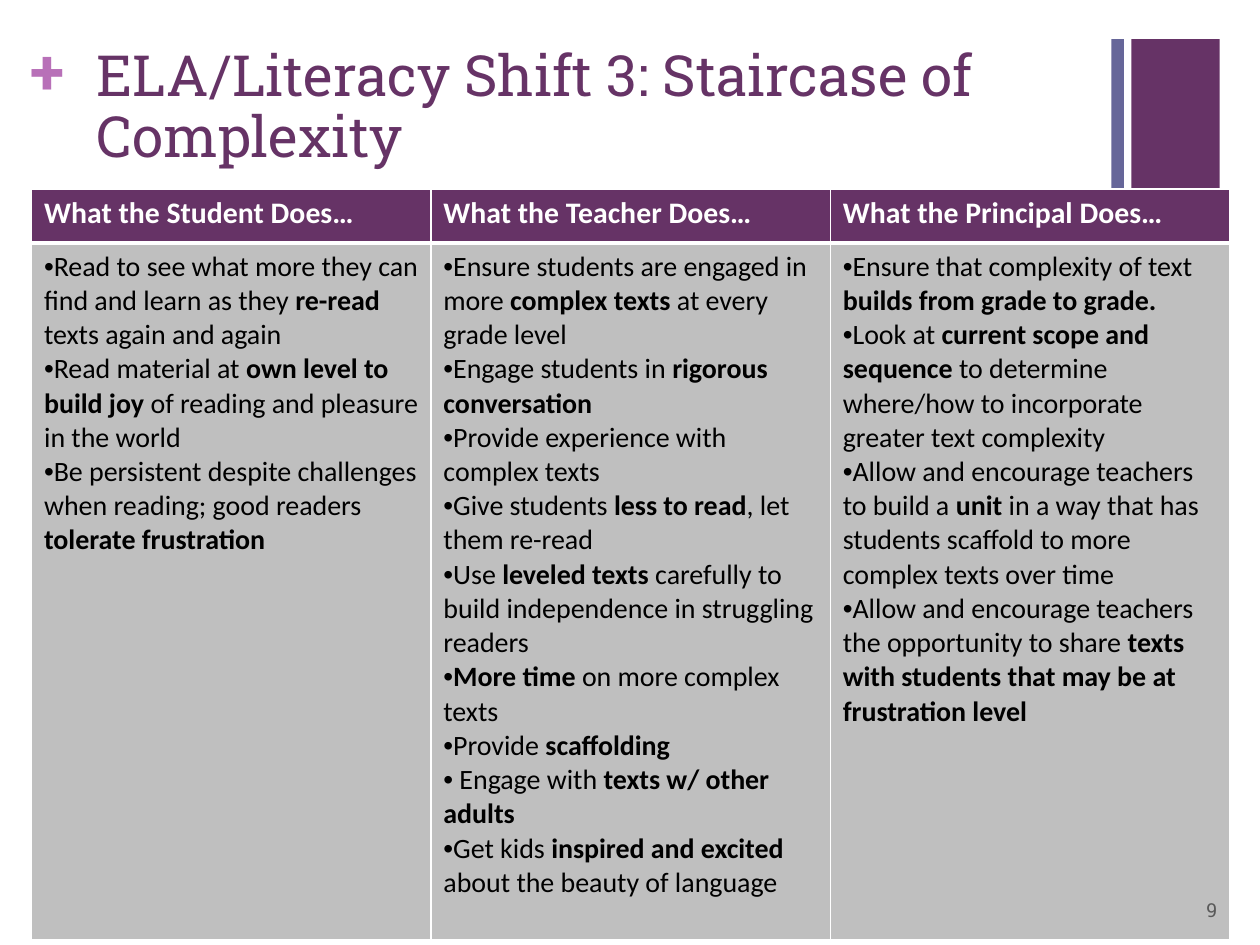
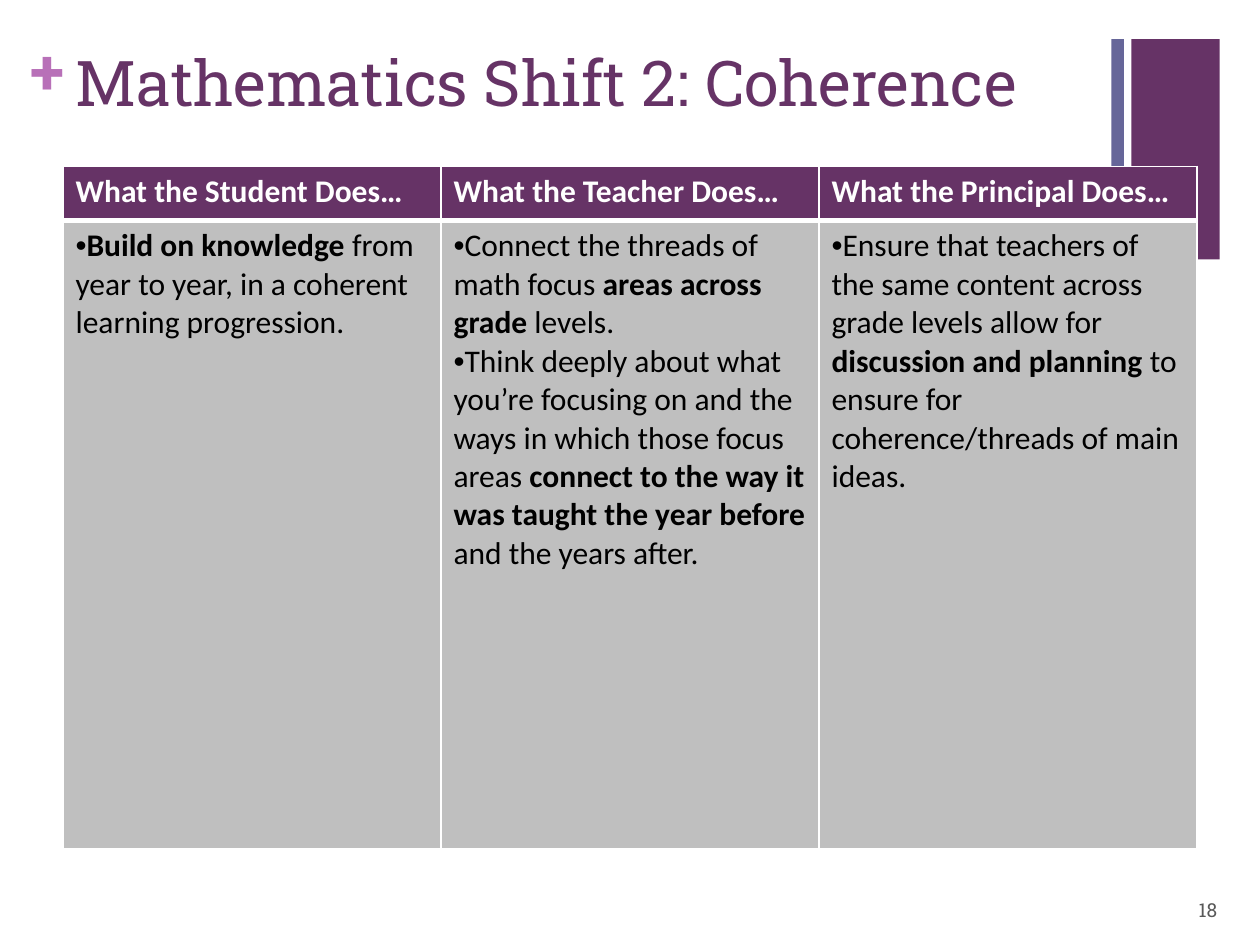
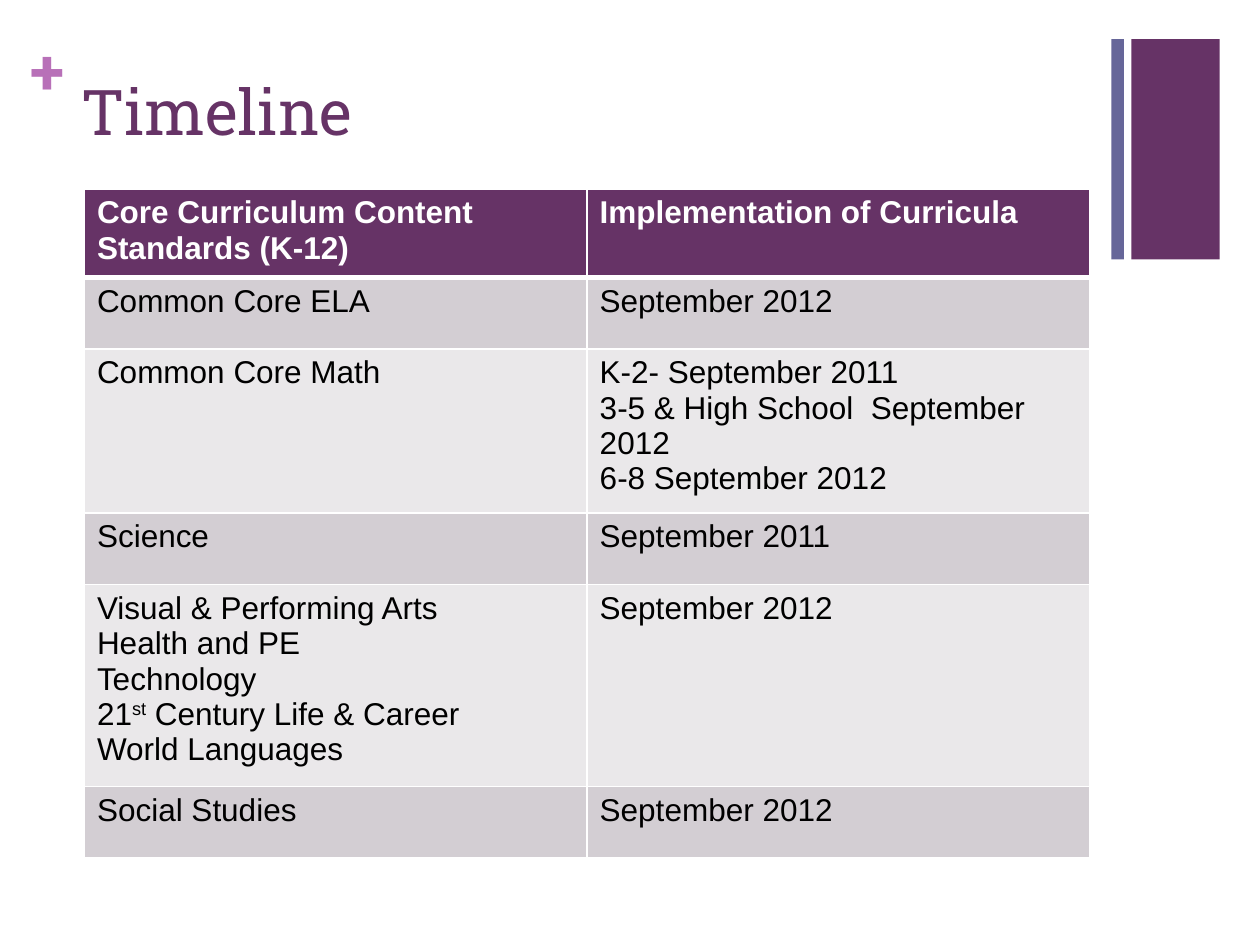
from dataclasses import dataclass

from lxml import etree
from pptx import Presentation
from pptx.dml.color import RGBColor
from pptx.enum.shapes import MSO_SHAPE
from pptx.enum.text import MSO_ANCHOR, PP_ALIGN
from pptx.oxml.ns import qn
from pptx.util import Inches, Pt

RECTANGLE = MSO_SHAPE.RECTANGLE
TOP, MIDDLE = MSO_ANCHOR.TOP, MSO_ANCHOR.MIDDLE
LEFT, RIGHT = PP_ALIGN.LEFT, PP_ALIGN.RIGHT


@dataclass(frozen=True)
class Theme:
    purple: str = "663366"
    slate: str = "666699"
    orchid: str = "B870B8"
    white: str = "FFFFFF"
    black: str = "000000"
    grey_text: str = "595959"
    grey_fill: str = "BFBFBF"
    bands: tuple = ("D3CED3", "EAE8EA")
    heading_font: str = "Roboto Slab"
    shift_font: str = "Calibri"
    timeline_font: str = "Arial"
    title_size: float = 36
    small_title_size: float = 32.4
    table_size: float = 18
    dense_header_size: float = 17
    dense_body_size: float = 16
    number_size: float = 11
    thin_line: float = 1
    thick_line: float = 3


THEME = Theme()

SHIFT_HEADERS = ["What the Student Does…", "What the Teacher Does…",
                 "What the Principal Does…"]

# Text between asterisks is bold; text between carets is superscript.
STAIRCASE_COLUMNS = [
    ["Read to see what more they can find and learn as they *re-read* texts again and again",
     "Read material at *own level to build joy *of reading and pleasure in the world",
     "Be persistent despite challenges when reading; good readers *tolerate frustration*"],
    ["Ensure students are engaged in more *complex texts *at every grade level",
     "Engage students in *rigorous conversation*",
     "Provide experience with complex texts",
     "Give students *less to read*, let them re-read",
     "Use *leveled texts *carefully to build independence in struggling readers",
     "*More time *on more complex texts",
     "Provide *scaffolding*",
     " Engage with *texts w/ other adults*",
     "Get kids *inspired and excited *about the beauty of language"],
    ["Ensure that complexity of text *builds from grade to grade.*",
     "Look at *current scope and sequence *to determine where/how to incorporate "
     "greater text complexity",
     "Allow and encourage teachers to build a *unit* in a way that has students "
     "scaffold to more complex texts over time",
     "Allow and encourage teachers the opportunity to share *texts with students "
     "that may be at frustration level*"],
]

COHERENCE_COLUMNS = [
    ["*Build on knowledge* from year to year, in a coherent learning progression."],
    ["Connect the threads of math focus *areas across grade *levels.",
     "Think deeply about what you’re focusing on and the ways in which those focus "
     "areas *connect to the way it was taught the year before *and the years after."],
    ["Ensure that teachers of the same content across grade levels allow for "
     "*discussion and planning *to ensure for coherence/threads of main ideas."],
]

TIMELINE_HEADERS = ["Core Curriculum Content Standards (K-12)",
                    "Implementation of Curricula"]
TIMELINE_ROWS = [
    (["Common Core ELA"], ["September 2012"]),
    (["Common Core Math"],
     ["K-2- September 2011", "3-5 & High School  September 2012",
      "6-8 September 2012"]),
    (["Science"], ["September 2011"]),
    (["Visual & Performing Arts", "Health and PE", "Technology",
      "21^st^ Century Life & Career", "World Languages"], ["September 2012"]),
    (["Social Studies"], ["September 2012"]),
]
TIMELINE_HEIGHTS = [0.65, 0.57, 1.21, 0.57, 1.5, 0.57]


def color(value):
    return RGBColor.from_string(value)


def add_run(paragraph, text, font, size, fill, bold=False):
    run = paragraph.add_run()
    run.text = text
    run.font.name = font
    run.font.size = Pt(size)
    run.font.bold = bold
    run.font.color.rgb = color(fill)
    return run


def add_marked_text(paragraph, text, font, size, fill):
    for bold_index, part in enumerate(text.split("*")):
        for raised_index, piece in enumerate(part.split("^")):
            if piece:
                run = add_run(paragraph, piece, font, size, fill, bold_index % 2 == 1)
                if raised_index % 2:
                    run.font._element.set("baseline", "30000")


def add_bullet(paragraph):
    properties = paragraph._p.get_or_add_pPr()
    properties.set("marL", "0")
    properties.set("indent", "0")
    etree.SubElement(properties, qn("a:buFont"), typeface="Arial")
    etree.SubElement(properties, qn("a:buChar"), char="•")


def add_text_box(slide, box, anchor=TOP, wrap=True):
    frame = slide.shapes.add_textbox(*map(Inches, box)).text_frame
    frame.word_wrap = wrap
    frame.vertical_anchor = anchor
    return frame


def add_bar(slide, box, fill):
    bar = slide.shapes.add_shape(RECTANGLE, *map(Inches, box))
    bar.shadow.inherit = False
    bar.fill.solid()
    bar.fill.fore_color.rgb = color(fill)
    bar.line.fill.background()


def add_decoration(slide):
    add_bar(slide, (8.98, 0.31, 0.7, 1.75), THEME.purple)
    add_bar(slide, (8.82, 0.31, 0.1, 1.75), THEME.slate)
    frame = add_text_box(slide, (0.24, 0.25, 0.28, 0.61), wrap=False)
    frame.margin_left = frame.margin_right = 0
    frame.margin_top = frame.margin_bottom = 0
    add_run(frame.paragraphs[0], "+", THEME.heading_font, THEME.title_size,
            THEME.orchid, bold=True)


def add_title(slide, lines, box, size=THEME.title_size, spacing=1.0):
    paragraph = add_text_box(slide, box).paragraphs[0]
    paragraph.line_spacing = spacing
    for index, line in enumerate(lines):
        if index:
            paragraph.add_line_break()
        add_run(paragraph, line, THEME.heading_font, size, THEME.purple)


def add_page_number(slide, number):
    paragraph = add_text_box(slide, (7.43, 7.02, 2.33, 0.4), MIDDLE).paragraphs[0]
    paragraph.alignment = RIGHT
    add_run(paragraph, str(number), THEME.heading_font, THEME.number_size,
            THEME.grey_text)


def set_borders(cell, top, bottom):
    properties = cell._tc.get_or_add_tcPr()
    widths = {"a:lnL": THEME.thin_line, "a:lnR": THEME.thin_line,
              "a:lnT": top, "a:lnB": bottom}
    for index, (tag, width) in enumerate(widths.items()):
        line = etree.Element(qn(tag), w=str(Pt(width)))
        fill = etree.SubElement(line, qn("a:solidFill"))
        etree.SubElement(fill, qn("a:srgbClr"), val=THEME.white)
        properties.insert(index, line)


def fill_cell(cell, lines, fill, font, size, text_color, bulleted=False):
    cell.fill.solid()
    cell.fill.fore_color.rgb = color(fill)
    frame = cell.text_frame
    for index, line in enumerate(lines):
        paragraph = frame.add_paragraph() if index else frame.paragraphs[0]
        paragraph.alignment = LEFT
        if bulleted:
            add_bullet(paragraph)
        add_marked_text(paragraph, line, font, size, text_color)


def add_header_table(slide, left, top, width, heights, headers, rows, bands,
                     font, header_size, body_size, bulleted=False):
    """Draw equal columns under a purple header; body rows cycle through bands."""
    frame = slide.shapes.add_table(len(heights), len(headers), Inches(left), Inches(top),
                                   Inches(width), Inches(sum(heights)))
    table = frame.table
    table.first_row = table.horz_banding = False
    for column in table.columns:
        column.width = Inches(width / len(headers))
    for row, height in zip(table.rows, heights):
        row.height = Inches(height)
    for column, header in enumerate(headers):
        cell = table.cell(0, column)
        fill_cell(cell, [f"*{header}*"], THEME.purple, font, header_size, THEME.white)
        set_borders(cell, THEME.thin_line, THEME.thick_line)
    for row_index, row in enumerate(rows):
        for column, lines in enumerate(row):
            cell = table.cell(row_index + 1, column)
            fill_cell(cell, lines, bands[row_index % len(bands)], font, body_size,
                      THEME.black, bulleted)
            set_borders(cell, THEME.thin_line if row_index else THEME.thick_line,
                        THEME.thin_line)


def add_base_slide(presentation):
    slide = presentation.slides.add_slide(presentation.slide_layouts[6])
    add_decoration(slide)
    return slide


def add_shift_table(slide, left, top, width, body_height, columns, header_size, body_size):
    add_header_table(slide, left, top, width, [0.43, body_height], SHIFT_HEADERS,
                     [columns], [THEME.grey_fill], THEME.shift_font,
                     header_size, body_size, bulleted=True)


def build_staircase_slide(presentation):
    slide = add_base_slide(presentation)
    add_title(slide, ["ELA/Literacy Shift 3: Staircase of ", "Complexity"],
              (0.67, 0.33, 8.83, 0.66), THEME.small_title_size, 0.9)
    add_shift_table(slide, 0.25, 1.5, 9.51, 5.53, STAIRCASE_COLUMNS,
                    THEME.dense_header_size, THEME.dense_body_size)
    add_page_number(slide, 9)


def build_coherence_slide(presentation):
    slide = add_base_slide(presentation)
    add_title(slide, ["Mathematics Shift 2: Coherence"], (0.5, 0.3, 9, 0.66))
    add_shift_table(slide, 0.5, 1.32, 9, 4.99, COHERENCE_COLUMNS,
                    THEME.table_size, THEME.table_size)
    add_page_number(slide, 18)


def build_timeline_slide(presentation):
    slide = add_base_slide(presentation)
    add_title(slide, ["Timeline"], (0.55, 0.53, 8.26, 1.22))
    add_header_table(slide, 0.67, 1.5, 7.98, TIMELINE_HEIGHTS, TIMELINE_HEADERS,
                     TIMELINE_ROWS, THEME.bands, THEME.timeline_font,
                     THEME.table_size, THEME.table_size)


def main():
    presentation = Presentation()
    presentation.slide_width = Inches(10)
    presentation.slide_height = Inches(7.5)
    build_staircase_slide(presentation)
    build_coherence_slide(presentation)
    build_timeline_slide(presentation)
    presentation.save("out.pptx")


if __name__ == "__main__":
    main()
